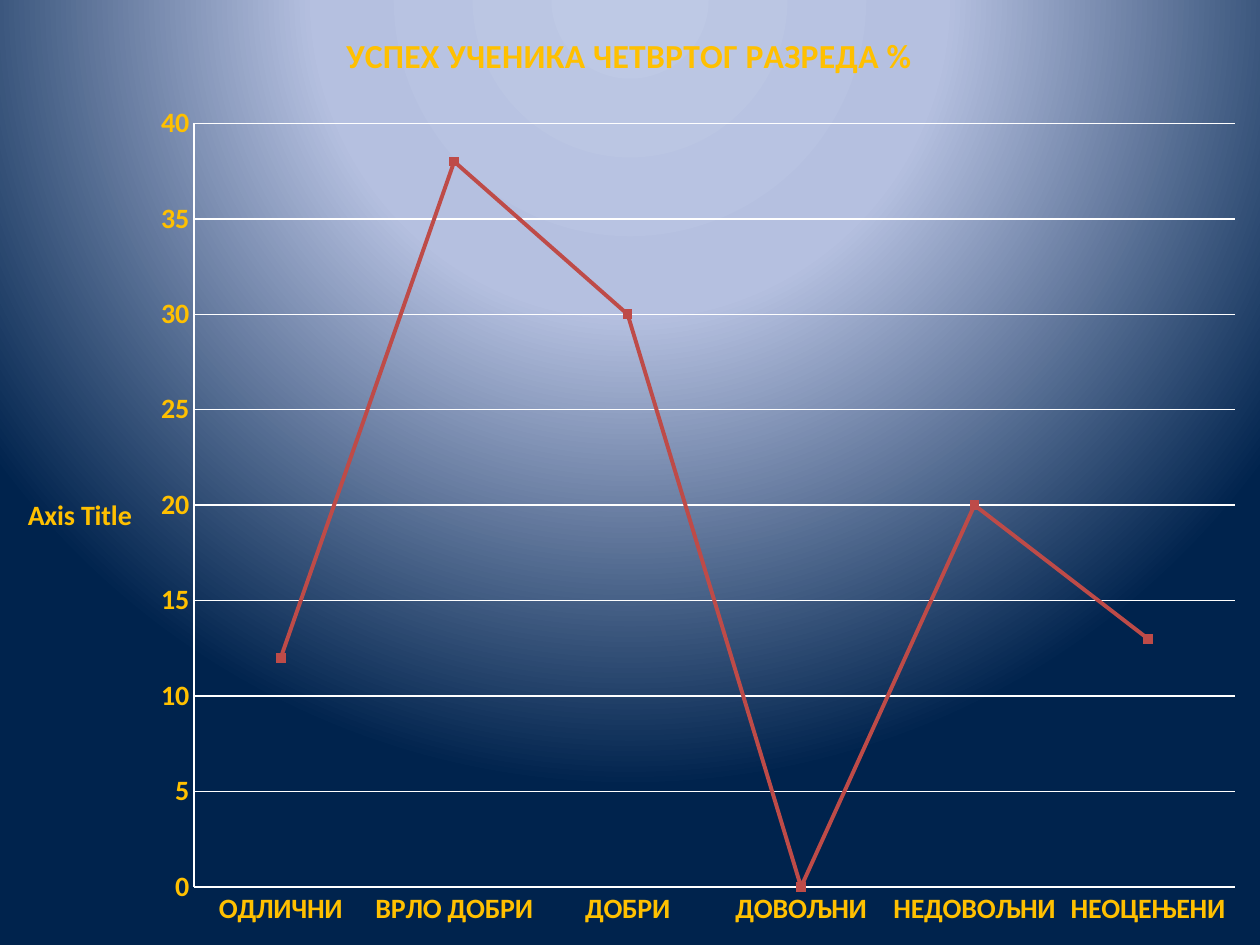
"""Build a slide with a line chart of the fourth-grade results in per cent."""
import pptx
import pptx.chart.data
import pptx.dml.color
import pptx.enum.chart
import pptx.oxml
import pptx.oxml.ns
import pptx.util

GOLD, WHITE, RED = "FFC000", "FFFFFF", "BE4B48"
FONT = "Calibri"
WIDTH, HEIGHT = 10, 7.5


def colour(target, value):
    target.rgb = pptx.dml.color.RGBColor.from_string(value)


def write(frame, text, size=16, ink=GOLD, rotation=0):
    frame.text = text
    frame._txBody.bodyPr.set("rot", str(rotation))
    font = frame.paragraphs[0].runs[0].font
    font.name, font.size, font.bold = FONT, pptx.util.Pt(size), True
    colour(font.color, ink)


deck = pptx.Presentation()
deck.slide_width, deck.slide_height = pptx.util.Inches(WIDTH), pptx.util.Inches(HEIGHT)
slide = deck.slides.add_slide(deck.slide_layouts[6])

slide.background.fill.gradient()
gradient = slide._element.find(".//" + pptx.oxml.ns.qn("a:gradFill"))
stops = "".join(
    f'<a:gs pos="{share * 1000}"><a:srgbClr val="{value}"/></a:gs>'
    for share, value in [(0, "BEC9E5"), (40, "B5C0E0"), (100, "00234D")]
)
glow = pptx.oxml.parse_xml(
    f'<a:gradFill {pptx.oxml.ns.nsdecls("a")} rotWithShape="1"><a:gsLst>{stops}</a:gsLst>'
    '<a:path path="circle"><a:fillToRect l="50000" t="-80000" r="50000" b="180000"/></a:path>'
    "</a:gradFill>"
)
gradient.getparent().replace(gradient, glow)

results = pptx.chart.data.CategoryChartData()
results.categories = ["ОДЛИЧНИ", "ВРЛО ДОБРИ", "ДОБРИ", "ДОВОЉНИ", "НЕДОВОЉНИ", "НЕОЦЕЊЕНИ"]
results.add_series("Series 1", [12, 38, 30, 0, 20, 13])
chart = slide.shapes.add_chart(
    pptx.enum.chart.XL_CHART_TYPE.LINE_MARKERS_STACKED,
    0, 0, deck.slide_width, deck.slide_height, results,
).chart
chart.has_legend = False
chart.font.name, chart.font.size, chart.font.bold = FONT, pptx.util.Pt(16), True
colour(chart.font.color, GOLD)
chart.plots[0].vary_by_categories = False

grades, percent = chart.category_axis, chart.value_axis
percent.minimum_scale, percent.maximum_scale, percent.major_unit = 0, 40, 5
percent.has_major_gridlines = True
percent.tick_labels.number_format = "General"
percent.tick_labels.number_format_is_linked = False
for axis in (grades, percent):
    axis.major_tick_mark = pptx.enum.chart.XL_TICK_MARK.NONE
for rule in (grades.format.line, percent.format.line, percent.major_gridlines.format.line):
    rule.width = pptx.util.Pt(0.75)
    colour(rule.color, WHITE)

write(chart.chart_title.text_frame, "УСПЕХ УЧЕНИКА ЧЕТВРТОГ РАЗРЕДА %", size=19.2)
write(percent.axis_title.text_frame, "Axis Title")
chart.chart_title.include_in_layout = False

success = chart.plots[0].series[0]
success.smooth = False
success.format.line.width = pptx.util.Pt(2.25)
colour(success.format.line.color, RED)
success.marker.style = pptx.enum.chart.XL_MARKER_STYLE.SQUARE
success.marker.size = 5
success.marker.format.fill.solid()
colour(success.marker.format.fill.fore_color, RED)
colour(success.marker.format.line.color, RED)

plot_area = chart._chartSpace.chart.plotArea
for part, inches in [
    (plot_area, {"x": 1.54, "y": 0.98, "w": 8.26, "h": 6.06}),
    (chart.chart_title._element, {"x": 2.7, "y": 0.2}),
    (percent.axis_title._element, {"x": 0.18, "y": 3.9}),
]:
    for old in part.findall(pptx.oxml.ns.qn("c:layout")):
        part.remove(old)
    target = '<c:layoutTarget val="inner"/>' if part is plot_area else ""
    modes = "".join(f'<c:{side}Mode val="edge"/>' for side in "xy")
    sizes = "".join(
        f'<c:{side} val="{length / (WIDTH if side in "xw" else HEIGHT)}"/>'
        for side, length in inches.items()
    )
    layout = pptx.oxml.parse_xml(
        f'<c:layout {pptx.oxml.ns.nsdecls("c")}><c:manualLayout>{target}{modes}{sizes}'
        "</c:manualLayout></c:layout>"
    )
    part.insert(0 if part is plot_area else 1, layout)

deck.save("out.pptx")
